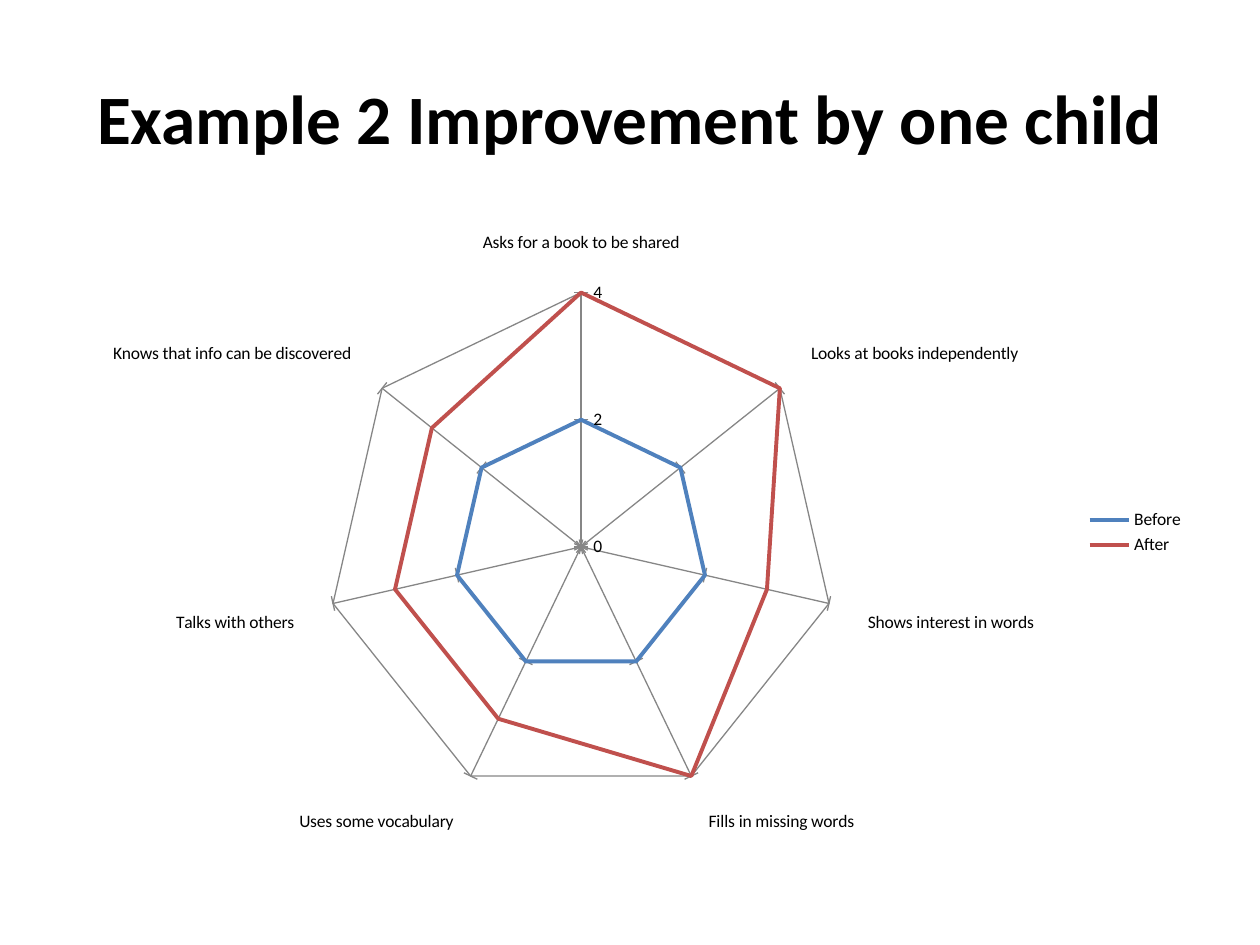
from pptx import Presentation
from pptx.chart.data import CategoryChartData
from pptx.dml.color import RGBColor
from pptx.enum.chart import XL_CHART_TYPE, XL_LEGEND_POSITION, XL_TICK_MARK
from pptx.enum.text import MSO_ANCHOR, PP_ALIGN
from pptx.util import Inches, Pt

RADAR = XL_CHART_TYPE.RADAR
RIGHT = XL_LEGEND_POSITION.RIGHT
CROSS, OUT = XL_TICK_MARK.CROSS, XL_TICK_MARK.OUTSIDE
BLACK = RGBColor(0x00, 0x00, 0x00)
GREY = RGBColor(0x86, 0x86, 0x86)
BLUE = RGBColor(0x4F, 0x81, 0xBD)
RED = RGBColor(0xC0, 0x50, 0x4D)
FACE = "Calibri"

SKILLS = [
    "Asks for a book to be shared",
    "Looks at books independently",
    "Shows interest in words",
    "Fills in missing words",
    "Uses some vocabulary",
    "Talks with others",
    "Knows that info can be discovered",
]
SCORES = [
    ("Before", [2, 2, 2, 2, 2, 2, 2], BLUE),
    ("After", [4, 4, 3, 4, 3, 3, 3], RED),
]

prs = Presentation()
prs.slide_width, prs.slide_height = Inches(10), Inches(7.5)
slide = prs.slides.add_slide(prs.slide_layouts[5])
left, width = int(prs.slide_width * 0.05), int(prs.slide_width * 0.9)

# Title
title = slide.shapes.title
title.left, title.top = left, Inches(0.3)
title.width, title.height = width, Inches(1.25)
frame = title.text_frame
frame.text = "Example 2 Improvement by one child"
frame.vertical_anchor = MSO_ANCHOR.MIDDLE
head = frame.paragraphs[0]
head.alignment = PP_ALIGN.CENTER
head.font.name, head.font.size, head.font.bold = FACE, Pt(39.6), True
head.font.color.rgb = BLACK

# Radar chart
data = CategoryChartData(number_format="General")
data.categories = SKILLS
for name, marks, _ in SCORES:
    data.add_series(name, marks)
chart = slide.shapes.add_chart(
    RADAR, left, Inches(1.75), width, Inches(4.95), data).chart
chart.has_title = False
chart.font.name, chart.font.size = FACE, Pt(10)
chart.font.color.rgb = BLACK
chart.has_legend = True
chart.legend.position = RIGHT
chart.legend.include_in_layout = False

for series, (_, _, color) in zip(chart.plots[0].series, SCORES):
    series.smooth = False
    series.format.line.color.rgb = color
    series.format.line.width = Pt(2.25)

scale = chart.value_axis
scale.minimum_scale, scale.maximum_scale, scale.major_unit = 0, 4, 2
for axis, tick in ((chart.category_axis, OUT), (scale, CROSS)):
    axis.has_major_gridlines = True
    axis.major_tick_mark = tick
    axis.minor_tick_mark = XL_TICK_MARK.NONE
    for line in (axis.format.line, axis.major_gridlines.format.line):
        line.color.rgb = GREY
        line.width = Pt(0.75)

prs.save("out.pptx")
